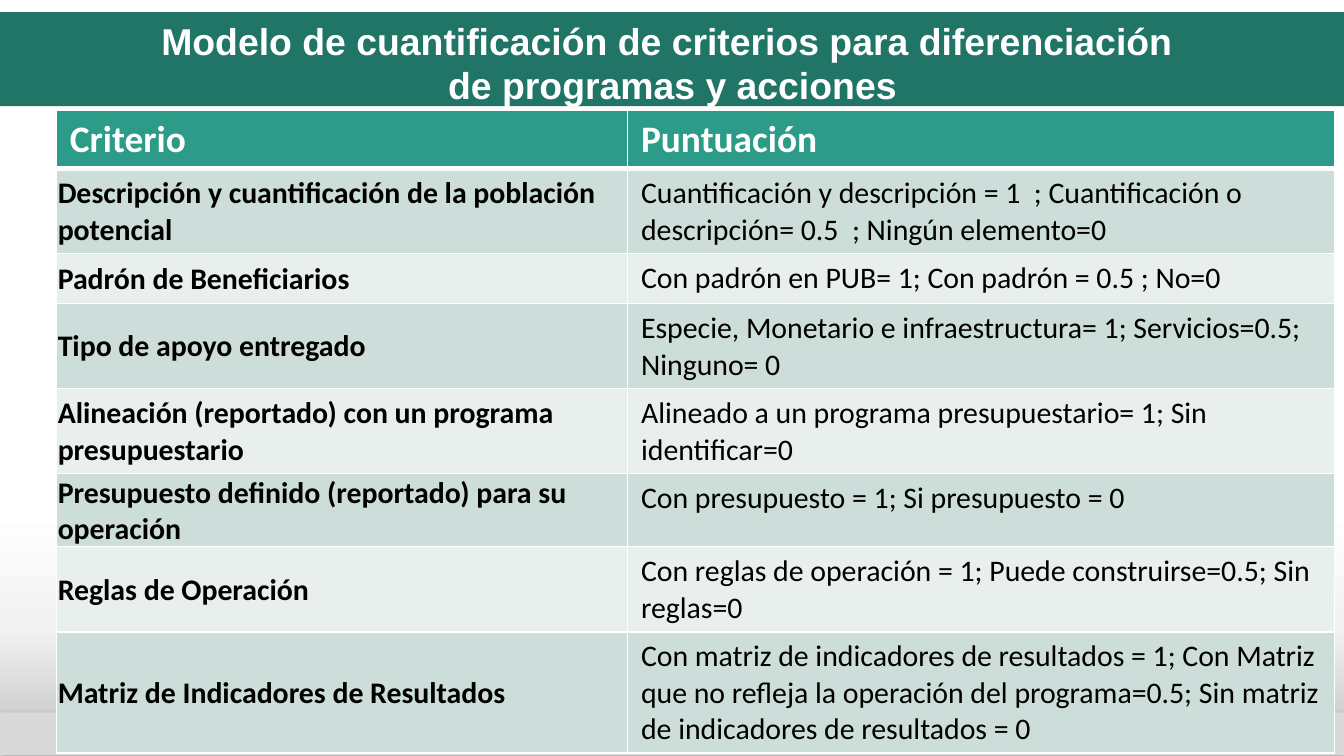
"""Build the slide with the scoring criteria table for programmes and actions."""
import copy

import pptx
import pptx.dml.color
import pptx.enum.shapes
import pptx.enum.text
import pptx.oxml
import pptx.oxml.ns
import pptx.util
from pptx.dml.color import RGBColor
from pptx.util import Inches, Pt

WHITE = RGBColor(0xFF, 0xFF, 0xFF)
BLACK = RGBColor(0x00, 0x00, 0x00)
PALE_GREY = RGBColor(0xF2, 0xF2, 0xF2)
MID_GREY = RGBColor(0xBF, 0xBF, 0xBF)
FLOOR_GREY = RGBColor(0xD9, 0xD9, 0xD9)
DARK_GREEN = RGBColor(0x21, 0x75, 0x67)
HEADER_GREEN = RGBColor(0x2C, 0x9C, 0x89)
BAND_DARK = RGBColor(0xCD, 0xDE, 0xDA)
BAND_LIGHT = RGBColor(0xE8, 0xEF, 0xED)

ROWS = [
    ("Criterio", "Puntuación", 0.28),
    ("Descripción y cuantificación de la población potencial",
     "Cuantificación y descripción = 1  ; Cuantificación o descripción= 0.5  ; Ningún elemento=0", 0.43),
    ("Padrón de Beneficiarios",
     "Con padrón en PUB= 1; Con padrón = 0.5 ; No=0", 0.37),
    ("Tipo de apoyo entregado",
     "Especie, Monetario e infraestructura= 1; Servicios=0.5; Ninguno= 0", 0.52),
    ("Alineación (reportado) con un programa presupuestario",
     "Alineado a un programa presupuestario= 1; Sin identificar=0", 0.5),
    ("Presupuesto definido (reportado) para su operación",
     "Con presupuesto = 1; Si presupuesto = 0", 0.45),
    ("Reglas de Operación",
     "Con reglas de operación = 1; Puede construirse=0.5; Sin reglas=0", 0.49),
    ("Matriz de Indicadores de Resultados",
     "Con matriz de indicadores de resultados = 1; Con Matriz que no refleja la operación "
     "del programa=0.5; Sin matriz de indicadores de resultados = 0", 0.42),
]


def add_band(slide, top, height):
    band = slide.shapes.add_shape(pptx.enum.shapes.MSO_SHAPE.RECTANGLE,
                                  0, Inches(top), Inches(10), Inches(height))
    band.shadow.inherit = False
    band.line.fill.background()
    return band


def set_borders(cell, bottom_width):
    widths = {"lnL": 1, "lnR": 1, "lnT": 1, "lnB": bottom_width}
    for position, (tag, width) in enumerate(widths.items()):
        border = pptx.oxml.parse_xml(
            f'<a:{tag} {pptx.oxml.ns.nsdecls("a")} w="{Pt(width)}"><a:solidFill>'
            f'<a:srgbClr val="{WHITE}"/></a:solidFill></a:{tag}>')
        cell._tc.get_or_add_tcPr().insert(position, border)


presentation = pptx.Presentation()
presentation.slide_width = Inches(10)
presentation.slide_height = Inches(10) * 9 // 16
slide = presentation.slides.add_slide(presentation.slide_layouts[6])

backdrop = add_band(slide, 1.94, 3.68)
backdrop.fill.gradient()
backdrop.fill.gradient_angle = 270
first_stop = backdrop._element.spPr.find(".//" + pptx.oxml.ns.qn("a:gs"))
first_stop.addnext(copy.deepcopy(first_stop))
for stop, position, color in zip(backdrop.fill.gradient_stops, (0.5, 0.74, 1),
                                 (WHITE, PALE_GREY, MID_GREY)):
    stop.position = position
    stop.color.rgb = color

floor = add_band(slide, 5.3, 0.32)
floor.fill.solid()
floor.fill.fore_color.rgb = FLOOR_GREY
floor._element.spPr.find(pptx.oxml.ns.qn("a:effectLst")).append(pptx.oxml.parse_xml(
    f'<a:outerShdw {pptx.oxml.ns.nsdecls("a")} blurRad="{Pt(3.1)}" dist="{Pt(1.8)}" dir="5400000" '
    f'rotWithShape="0"><a:srgbClr val="{BLACK}"><a:alpha val="35000"/></a:srgbClr></a:outerShdw>'))

title_band = add_band(slide, 0.09, 0.7)
title_band.fill.solid()
title_band.fill.fore_color.rgb = DARK_GREEN

title = slide.shapes.add_textbox(Inches(0.08), Inches(0.12), Inches(9.85), Inches(0.69))
title.text_frame.word_wrap = True
title.text_frame.vertical_anchor = pptx.enum.text.MSO_ANCHOR.MIDDLE
heading = title.text_frame.paragraphs[0]
heading.text = "Modelo de cuantificación de criterios para diferenciación \vde programas y acciones"
heading.alignment = pptx.enum.text.PP_ALIGN.CENTER
for run in heading.runs:
    run.font.name = "Arial"
    run.font.size = Pt(20)
    run.font.bold = True
    run.font.color.rgb = WHITE

criteria_frame = slide.shapes.add_table(len(ROWS), 2, Inches(0.42), Inches(0.82),
                                        Inches(9.51), Inches(4.79))
criteria = criteria_frame.table
criteria.columns[0].width = Inches(4.25)
criteria.columns[1].width = Inches(5.26)
for row, (criterion, score, height) in enumerate(ROWS):
    criteria.rows[row].height = Inches(height)
    is_header = row == 0
    for column, text in enumerate((criterion, score)):
        cell = criteria.cell(row, column)
        cell.fill.solid()
        cell.fill.fore_color.rgb = HEADER_GREEN if is_header else (BAND_LIGHT, BAND_DARK)[row % 2]
        set_borders(cell, 3 if is_header else 1)
        if column == 0 and not is_header:
            cell.vertical_anchor = pptx.enum.text.MSO_ANCHOR.MIDDLE
            cell.margin_left = cell.margin_top = cell.margin_right = Inches(0.01)
            cell.margin_bottom = 0
        cell.text_frame.text = text
        font = cell.text_frame.paragraphs[0].runs[0].font
        font.name = "Calibri"
        font.size = Pt(20 if is_header else 16)
        font.bold = is_header or column == 0
        font.color.rgb = WHITE if is_header else BLACK
criteria_frame.height = Inches(4.79)

presentation.save("out.pptx")
